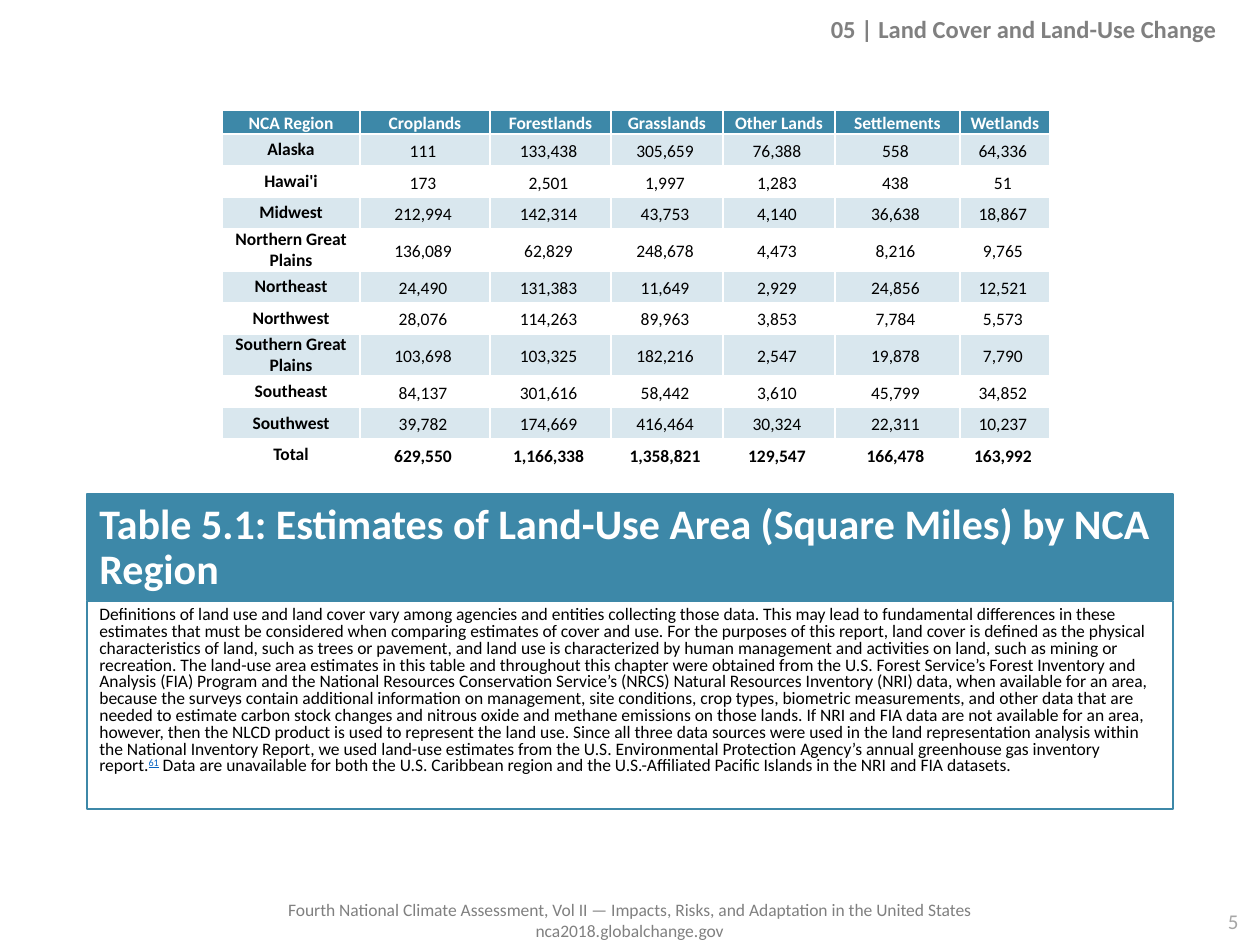
from lxml.etree import SubElement
from pptx import Presentation
from pptx.dml.color import RGBColor
from pptx.enum.shapes import MSO_SHAPE
from pptx.enum.text import MSO_ANCHOR, PP_ALIGN
from pptx.oxml.ns import qn
from pptx.util import Emu, Pt

TEAL, PALE, WHITE, BLACK = "3D88A8", "D9E7EE", "FFFFFF", "000000"
GREY, LIGHT_GREY, LINK_BLUE = "808080", "A6A6A6", "0563C1"

COLUMN_WIDTHS = [138, 130, 121, 112, 112, 125, 90]
HEADERS = ["NCA Region", "Croplands", "Forestlands", "Grasslands",
           "Other Lands", "Settlements", "Wetlands"]
LAND_USE = [
    ("Alaska", 111, 133438, 305659, 76388, 558, 64336),
    ("Hawai'i", 173, 2501, 1997, 1283, 438, 51),
    ("Midwest", 212994, 142314, 43753, 4140, 36638, 18867),
    ("Northern Great Plains", 136089, 62829, 248678, 4473, 8216, 9765),
    ("Northeast", 24490, 131383, 11649, 2929, 24856, 12521),
    ("Northwest", 28076, 114263, 89963, 3853, 7784, 5573),
    ("Southern Great Plains", 103698, 103325, 182216, 2547, 19878, 7790),
    ("Southeast", 84137, 301616, 58442, 3610, 45799, 34852),
    ("Southwest", 39782, 174669, 416464, 30324, 22311, 10237),
    ("Total", 629550, 1166338, 1358821, 129547, 166478, 163992),
]
DEFINITIONS = [
    "Definitions of land use and land cover vary among agencies and entities collecting "
    "those data.",
    "This may lead to fundamental differences in these estimates that must be "
    "considered when comparing estimates of cover and use.",
    "For the purposes of this report, land cover is defined as the physical "
    "characteristics of land, such as trees or pavement, and land use is characterized by "
    "human management and activities on land, such as mining or recreation.",
    "The land-use area estimates in this table and throughout this chapter were obtained "
    "from the U.S. Forest Service’s Forest Inventory and Analysis (FIA) Program and the "
    "National Resources Conservation Service’s (NRCS) Natural Resources Inventory (NRI) "
    "data, when available for an area, because the surveys contain additional information "
    "on management, site conditions, crop types, biometric measurements, and other data "
    "that are needed to estimate carbon stock changes and nitrous oxide and methane "
    "emissions on those lands.",
    "If NRI and FIA data are not available for an area, however, then the NLCD product is "
    "used to represent the land use.",
    "Since all three data sources were used in the land representation analysis within the "
    "National Inventory Report, we used land-use estimates from the U.S. Environmental "
    "Protection Agency’s annual greenhouse gas inventory report.",
]
AVAILABILITY = (
    " Data are unavailable for both the U.S. Caribbean region and the U.S.-Affiliated "
    "Pacific Islands in the NRI and FIA datasets."
)


def px(n):
    return Emu(round(n * 914400 / 126))


def rgb(color):
    return RGBColor.from_string(color)


def add_run(p, text, size, color, **formats):
    r = p.add_run()
    r.text = text
    r.font.color.rgb = rgb(color)
    for name, value in {"name": "Calibri", "size": Pt(size), **formats}.items():
        setattr(r.font, name, value)
    return r


def format_paragraph(p, **formats):
    for name, value in formats.items():
        setattr(p, name, value)


def add_label(s, box, lines, size, color, align, anchor=MSO_ANCHOR.TOP, **formats):
    tf = s.shapes.add_textbox(*map(px, box)).text_frame
    tf.word_wrap = True
    tf.vertical_anchor = anchor
    for i, line in enumerate(lines):
        p = tf.add_paragraph() if i else tf.paragraphs[0]
        p.alignment = align
        add_run(p, line, size, color, **formats)


def add_panel(s, box, anchor, fill=None, **formats):
    """Add a teal-bordered rectangle and return its empty paragraph."""
    sp = s.shapes.add_shape(MSO_SHAPE.RECTANGLE, *map(px, box))
    sp.shadow.inherit = False
    if fill:
        sp.fill.solid()
        sp.fill.fore_color.rgb = rgb(fill)
    else:
        sp.fill.background()
    sp.line.color.rgb = rgb(TEAL)
    sp.line.width = Pt(1.5)
    tf = sp.text_frame
    tf.word_wrap = True
    tf.vertical_anchor = anchor
    p = tf.paragraphs[0]
    format_paragraph(p, alignment=PP_ALIGN.LEFT, **formats)
    return p


def set_borders(cell, color):
    tc_pr = cell._tc.get_or_add_tcPr()
    for i, side in enumerate(("lnL", "lnR", "lnT", "lnB")):
        ln = SubElement(tc_pr, qn(f"a:{side}"), w=str(Pt(1)))
        SubElement(SubElement(ln, qn("a:solidFill")), qn("a:srgbClr"), val=color)
        tc_pr.insert(i, ln)


def fill_cell(cell, text, fill, color, bold, **formats):
    cell.fill.solid()
    cell.fill.fore_color.rgb = rgb(fill)
    set_borders(cell, WHITE)
    cell.margin_left = cell.margin_right = px(9)
    cell.margin_top = cell.margin_bottom = 0
    cell.vertical_anchor = MSO_ANCHOR.MIDDLE
    p = cell.text_frame.paragraphs[0]
    format_paragraph(p, alignment=PP_ALIGN.CENTER, **formats)
    add_run(p, text, 10, color, bold=bold)


def add_land_use_table(s):
    header_height, row_height = px(24), px(63) // 2
    table = s.shapes.add_table(
        len(LAND_USE) + 1, len(HEADERS), px(222), px(110), px(sum(COLUMN_WIDTHS)),
        header_height + row_height * len(LAND_USE)).table
    table.first_row = table.horz_banding = False
    for column, width in zip(table.columns, COLUMN_WIDTHS):
        column.width = px(width)
    table.rows[0].height = header_height
    spaced = {"line_spacing": 1.15, "space_after": Pt(6)}
    for c, header in enumerate(HEADERS):
        fill_cell(table.cell(0, c), header, TEAL, WHITE, True, **spaced)
    for i, (region, *areas) in enumerate(LAND_USE, 1):
        table.rows[i].height = row_height
        fill = PALE if i % 2 else WHITE
        fill_cell(table.cell(i, 0), region, fill, BLACK, True)
        for c, area in enumerate(areas, 1):
            fill_cell(table.cell(i, c), f"{area:,} ", fill, BLACK, region == "Total", **spaced)


def add_caption(s):
    title = add_panel(s, (87, 494, 1086, 106), MSO_ANCHOR.BOTTOM, TEAL, line_spacing=0.9)
    add_run(title, "Table 5.1: Estimates of Land-Use Area (Square Miles) by NCA Region",
            24, WHITE, bold=True)
    body = add_panel(s, (87, 601, 1086, 208), MSO_ANCHOR.TOP,
                     line_spacing=0.8, space_after=Pt(6))
    add_run(body, " ".join(DEFINITIONS), 10, BLACK)
    citation = add_run(body, "61", 10, LINK_BLUE, underline=True)
    citation._r.get_or_add_rPr().set("baseline", "30000")
    add_run(body, AVAILABILITY, 10, BLACK)


def main():
    prs = Presentation()
    prs.slide_width, prs.slide_height = px(1260), px(945)
    s = prs.slides.add_slide(prs.slide_layouts[6])
    add_label(s, (256, 893, 747, 55),
              ["Fourth National Climate Assessment, Vol II — Impacts, Risks, and Adaptation "
               "in the United States", "nca2018.globalchange.gov"],
              10, GREY, PP_ALIGN.CENTER)
    add_label(s, (1010, 902, 241, 34), ["5"], 12, LIGHT_GREY, PP_ALIGN.RIGHT)
    add_land_use_table(s)
    add_caption(s)
    add_label(s, (29, 9, 1200, 39), ["05 | Land Cover and Land-Use Change"],
              14, GREY, PP_ALIGN.RIGHT, MSO_ANCHOR.MIDDLE, bold=True)
    prs.save("out.pptx")


if __name__ == "__main__":
    main()
